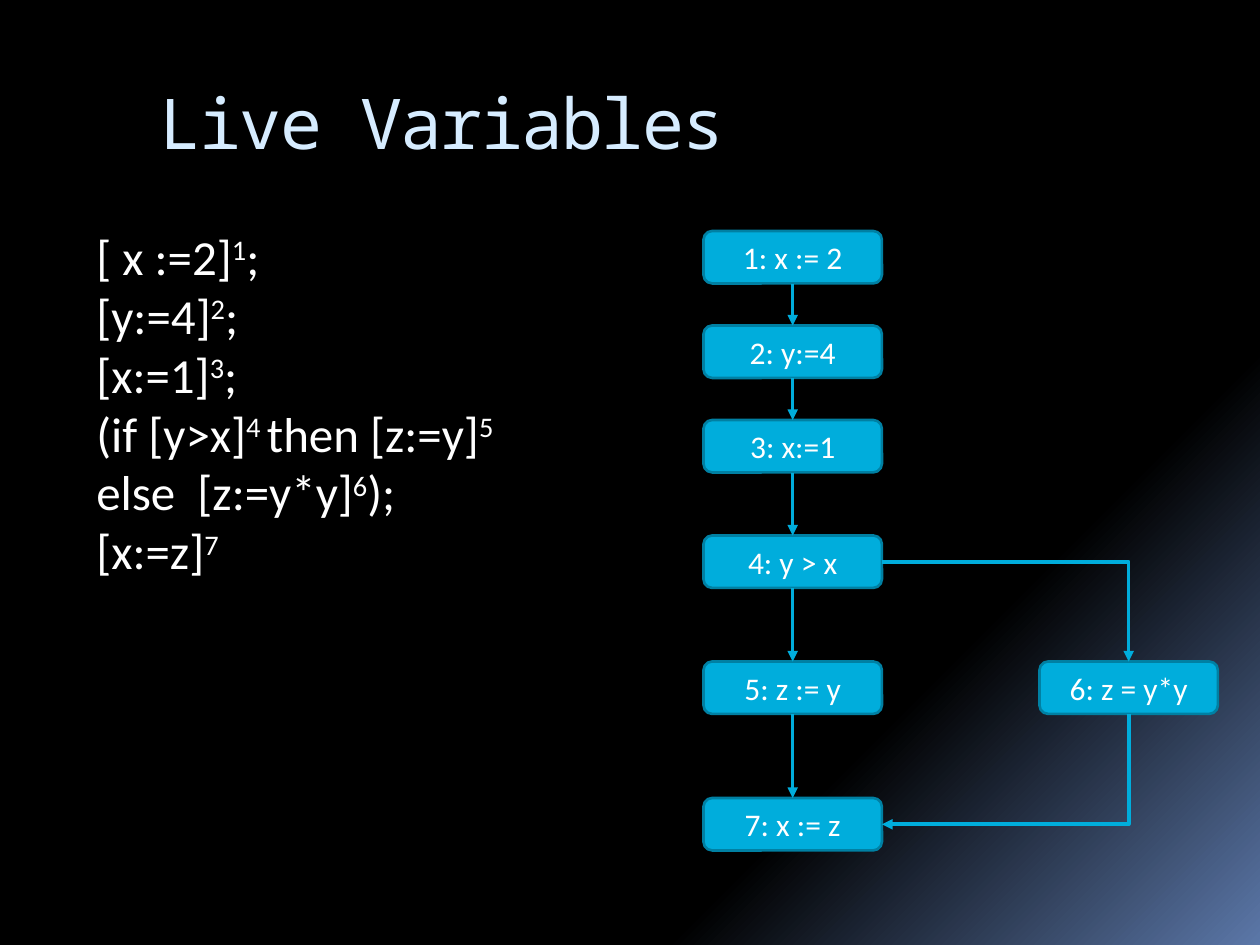
import pptx
import pptx.dml.color
import pptx.enum.dml
import pptx.enum.shapes
import pptx.enum.text
import pptx.oxml
import pptx.oxml.ns
import pptx.util

Pt = pptx.util.Pt
COLORS = {"black": "000000", "dusk": "5B77A8", "title": "D6ECFF",
          "text": "FFFFFF", "node": "00ADDC", "border": "0080A3"}
NODE_WIDTH, NODE_HEIGHT = 102, 30
MAIN_X, ELSE_X = 402, 594
TOP, LEFT, BOTTOM, RIGHT = range(4)

PROGRAM = [
    ("[ x :=2]", "1", ";"),
    ("[y:=4]", "2", ";"),
    ("[x:=1]", "3", ";"),
    ("(if [y>x]", "4 ", "then [z:=y]", "5"),
    ("else  [z:=y*y]", "6", ");"),
    ("[x:=z]", "7"),
]
NODES = {
    1: ("x := 2", MAIN_X, 132),
    2: ("y:=4", MAIN_X, 186),
    3: ("x:=1", MAIN_X, 240),
    4: ("y > x", MAIN_X, 306),
    5: ("z := y", MAIN_X, 378),
    6: ("z = y*y", ELSE_X, 378),
    7: ("x := z", MAIN_X, 456),
}
MAIN_FLOW = [(1, 2), (2, 3), (3, 4), (4, 5), (5, 7)]


def rgb(name):
    return pptx.dml.color.RGBColor.from_string(COLORS[name])


def set_background(slide):
    fill = slide.background.fill
    fill.gradient()
    fill.gradient_angle = 315
    for stop, position, name in zip(fill.gradient_stops, (0.73, 1), ("black", "dusk")):
        stop.position = position
        stop.color.rgb = rgb(name)


def add_run(paragraph, text, color, **formats):
    run = paragraph.add_run()
    run.text = text
    for key, value in formats.items():
        setattr(run.font, key, value)
    run.font.color.rgb = rgb(color)
    return run


def add_frame(slide, left, top, width, height):
    frame = slide.shapes.add_textbox(Pt(left), Pt(top), Pt(width), Pt(height)).text_frame
    frame.word_wrap = True
    return frame


def add_title(slide):
    frame = add_frame(slide, 84, 42, 612, 72)
    title = add_run(frame.paragraphs[0], "Live Variables", "title",
                    name="Noto Sans Mono", size=Pt(40))
    title.font._element.set("spc", "-100")


def add_program(slide):
    frame = add_frame(slide, 48, 126, 272, 211)
    for number, statement in enumerate(PROGRAM):
        line = frame.add_paragraph() if number else frame.paragraphs[0]
        for index, part in enumerate(statement):
            piece = add_run(line, part, "text", name="Calibri", size=Pt(28))
            if index % 2:
                piece.font._element.set("baseline", "30000")


def add_node(slide, label, left, top):
    node = slide.shapes.add_shape(
        pptx.enum.shapes.MSO_SHAPE.ROUNDED_RECTANGLE,
        Pt(left), Pt(top), Pt(NODE_WIDTH), Pt(NODE_HEIGHT))
    node.shadow.inherit = False
    node.fill.solid()
    node.fill.fore_color.rgb = rgb("node")
    node.line.color.rgb = rgb("border")
    node.line.width = Pt(1.5)
    node.text_frame.vertical_anchor = pptx.enum.text.MSO_ANCHOR.MIDDLE
    paragraph = node.text_frame.paragraphs[0]
    paragraph.alignment = pptx.enum.text.PP_ALIGN.CENTER
    add_run(paragraph, label, "text", name="Calibri", size=Pt(18))
    return node


def add_arrow(slide, source, source_site, target, target_site, kind="STRAIGHT"):
    arrow = slide.shapes.add_connector(
        pptx.enum.shapes.MSO_CONNECTOR[kind], 0, 0, 0, 0)
    arrow.begin_connect(source, source_site)
    arrow.end_connect(target, target_site)
    arrow.line.color.rgb = rgb("node")
    arrow.line.width = Pt(2)
    line = arrow.line._get_or_add_ln()
    line.append(pptx.oxml.parse_xml(
        f'<a:tailEnd {pptx.oxml.ns.nsdecls("a")} type="triangle"/>'))
    arrow._element.spPr.append(pptx.oxml.parse_xml(
        f'<a:effectLst {pptx.oxml.ns.nsdecls("a")}/>'))
    return arrow


def add_corner_arrow(slide, *ends):
    arrow = add_arrow(slide, *ends, kind="ELBOW")
    arrow._element.spPr.find(pptx.oxml.ns.qn("a:prstGeom")).set("prst", "bentConnector2")
    return arrow


def turn_quarter(arrow):
    left, top, width, height = arrow.left, arrow.top, arrow.width, arrow.height
    frame = arrow._element.spPr.find(pptx.oxml.ns.qn("a:xfrm"))
    for flip in ("flipH", "flipV"):
        frame.attrib.pop(flip, None)
    frame.set("rot", "5400000")
    arrow.left = left + (width - height) // 2
    arrow.top = top + (height - width) // 2
    arrow.width, arrow.height = height, width


def main():
    presentation = pptx.Presentation()
    presentation.slide_width, presentation.slide_height = Pt(720), Pt(540)
    slide = presentation.slides.add_slide(presentation.slide_layouts[6])
    set_background(slide)
    add_program(slide)
    add_title(slide)
    nodes = {number: add_node(slide, f"{number}: {statement}", left, top)
             for number, (statement, left, top) in NODES.items()}
    for source, target in MAIN_FLOW:
        add_arrow(slide, nodes[source], BOTTOM, nodes[target], TOP)
    add_corner_arrow(slide, nodes[4], RIGHT, nodes[6], TOP)
    turn_quarter(add_corner_arrow(slide, nodes[6], BOTTOM, nodes[7], RIGHT))
    presentation.save("out.pptx")


if __name__ == "__main__":
    main()
